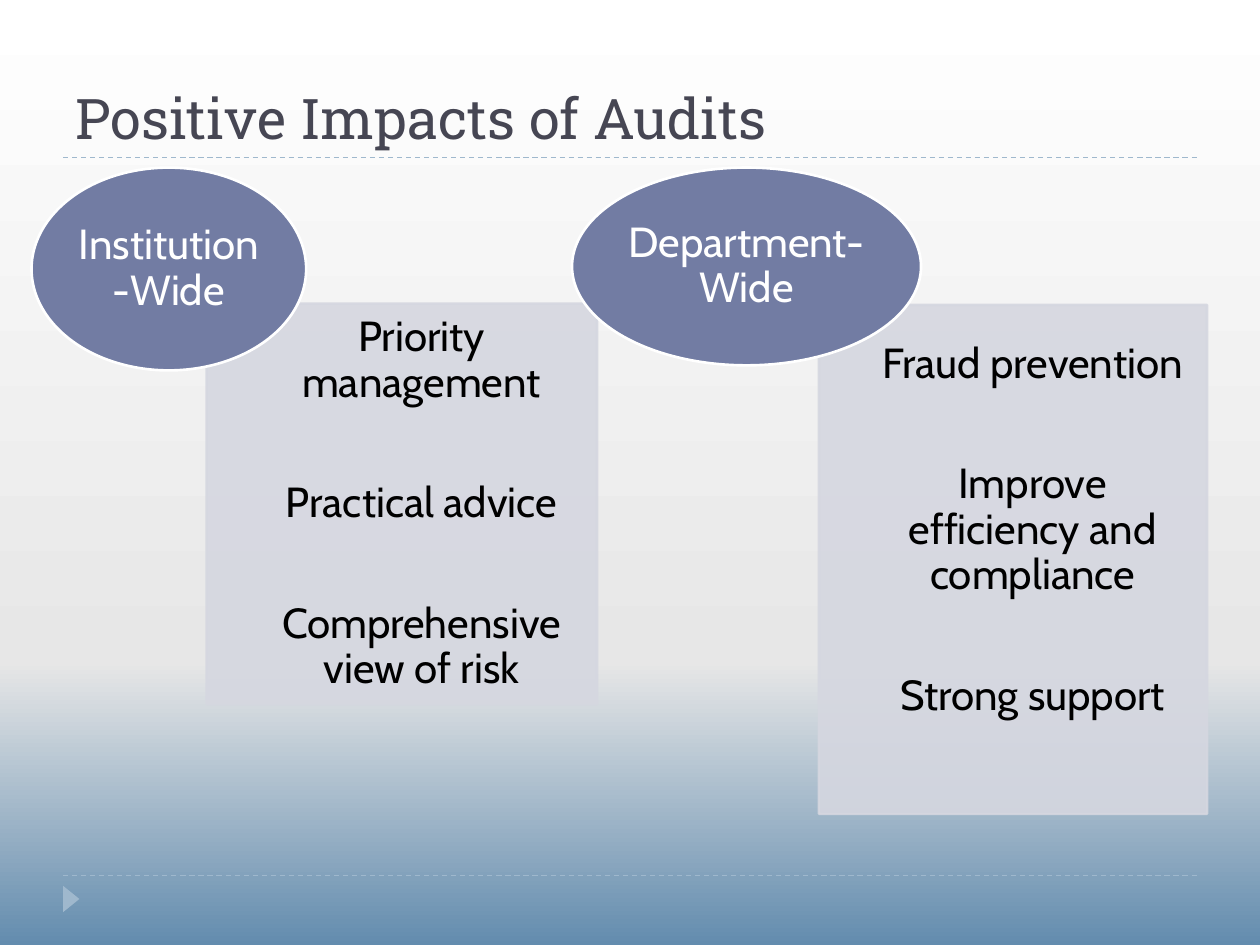
from copy import deepcopy
from dataclasses import dataclass

from pptx import Presentation
from pptx.dml.color import RGBColor
from pptx.enum.dml import MSO_LINE
from pptx.enum.shapes import MSO_CONNECTOR as Connector, MSO_SHAPE as Shape
from pptx.enum.text import MSO_ANCHOR as Anchor, PP_ALIGN as Align
from pptx.oxml.ns import qn
from pptx.util import Inches, Pt
from lxml.etree import SubElement


@dataclass(frozen=True)
class Theme:
    heading_font: str = "Roboto Slab"
    body_font: str = "Cabin"
    title_size: int = 32
    body_size: int = 24
    title: str = "464653"
    text: str = "000000"
    light: str = "FFFFFF"
    bubble: str = "727CA3"
    panel: str = "D5D7E0"
    accent: str = "9FB8CD"
    background: tuple = ((0, "638CAE"), (0.3, "E7E7E7"), (1, "FFFFFF"))


THEME = Theme()
WIDTH, HEIGHT, MARGIN = 10, 7.5, 0.5
TITLE = "Positive Impacts of Audits"
TITLE_BOX = (MARGIN, 0.17, WIDTH - 2 * MARGIN, 1.08)
RULES = (1.25, 6.95)
PANEL_INSETS = (0.5, 0.19, 0.19, 0.19)
GROUPS = [
    {
        "heading": "Institution-Wide",
        "bubble": (0.25, 1.33, 2.18, 1.61),
        "panel": (1.64, 2.41, 3.1, 3.18),
        "insets": PANEL_INSETS,
        "benefits": ["Priority management", "Practical advice",
                     "Comprehensive view of risk"],
    },
    {
        "heading": "Department-Wide",
        "bubble": (4.54, 1.33, 2.77, 1.57),
        "panel": (6.5, 2.42, 3.08, 4.04),
        "insets": (*PANEL_INSETS[:3], 0.65),
        "benefits": ["Fraud prevention", "Improve efficiency and compliance",
                     "Strong support"],
    },
]


def rgb(value):
    return RGBColor.from_string(value)


def style_runs(paragraph, font, size, color):
    for run in paragraph.runs:
        run.font.name = font
        run.font.size = Pt(size)
        run.font.color.rgb = rgb(color)


def set_background(slide):
    fill = slide.background.fill
    fill.gradient()
    fill.gradient_angle = 90
    stop_list = slide.element.find(".//" + qn("a:gsLst"))
    stop_list.append(deepcopy(stop_list[0]))
    for stop, (position, color) in zip(fill.gradient_stops, THEME.background):
        stop.position = position
        stop.color.rgb = rgb(color)


def add_title(slide):
    title = slide.shapes.title
    title.left, title.top, title.width, title.height = map(Inches, TITLE_BOX)
    title.text_frame.text = TITLE
    title.text_frame.vertical_anchor = Anchor.BOTTOM
    paragraph = title.text_frame.paragraphs[0]
    paragraph.alignment = Align.LEFT
    style_runs(paragraph, THEME.heading_font, THEME.title_size, THEME.title)


def add_rule(slide, y):
    rule = slide.shapes.add_connector(
        Connector.STRAIGHT, Inches(MARGIN), Inches(y),
        Inches(WIDTH - MARGIN), Inches(y))
    rule.line.color.rgb = rgb(THEME.accent)
    rule.line.width = Pt(0.75)
    rule.line.dash_style = MSO_LINE.DASH
    SubElement(rule.element.spPr, qn("a:effectLst"))


def add_shape(slide, kind, box, fill, outline=None):
    shape = slide.shapes.add_shape(kind, *map(Inches, box))
    shape.shadow.inherit = False
    shape.fill.solid()
    shape.fill.fore_color.rgb = rgb(fill)
    if outline:
        shape.line.color.rgb = rgb(outline)
        shape.line.width = Pt(1.5)
    else:
        shape.line.fill.background()
    return shape


def set_opacity(shape, percent):
    for color in shape.element.spPr.iter(qn("a:srgbClr")):
        SubElement(color, qn("a:alpha")).set("val", str(percent * 1000))


def write_text(shape, lines, color, insets=(0, 0, 0, 0)):
    frame = shape.text_frame
    frame.word_wrap = True
    frame.vertical_anchor = Anchor.MIDDLE
    (frame.margin_left, frame.margin_top,
     frame.margin_right, frame.margin_bottom) = map(Inches, insets)
    frame.text = "\n".join(lines)
    for index, paragraph in enumerate(frame.paragraphs):
        paragraph.alignment = Align.CENTER
        paragraph.line_spacing = 0.9
        paragraph.space_before = Pt(43 if index else 0)
        style_runs(paragraph, THEME.body_font, THEME.body_size, color)


def add_group(slide, group):
    panel = add_shape(slide, Shape.RECTANGLE, group["panel"],
                      THEME.panel, THEME.panel)
    set_opacity(panel, 90)
    write_text(panel, group["benefits"], THEME.text, group["insets"])
    bubble = add_shape(slide, Shape.OVAL, group["bubble"],
                       THEME.bubble, THEME.light)
    write_text(bubble, [group["heading"]], THEME.light)


def main():
    presentation = Presentation()
    presentation.slide_width = Inches(WIDTH)
    presentation.slide_height = Inches(HEIGHT)
    slide = presentation.slides.add_slide(presentation.slide_layouts[5])
    set_background(slide)
    for y in RULES:
        add_rule(slide, y)
    marker = add_shape(slide, Shape.ISOSCELES_TRIANGLE,
                       (0.46, 7.07, 0.21, 0.13), THEME.accent)
    marker.rotation = 90
    add_title(slide)
    for group in GROUPS:
        add_group(slide, group)
    presentation.save("out.pptx")


if __name__ == "__main__":
    main()
